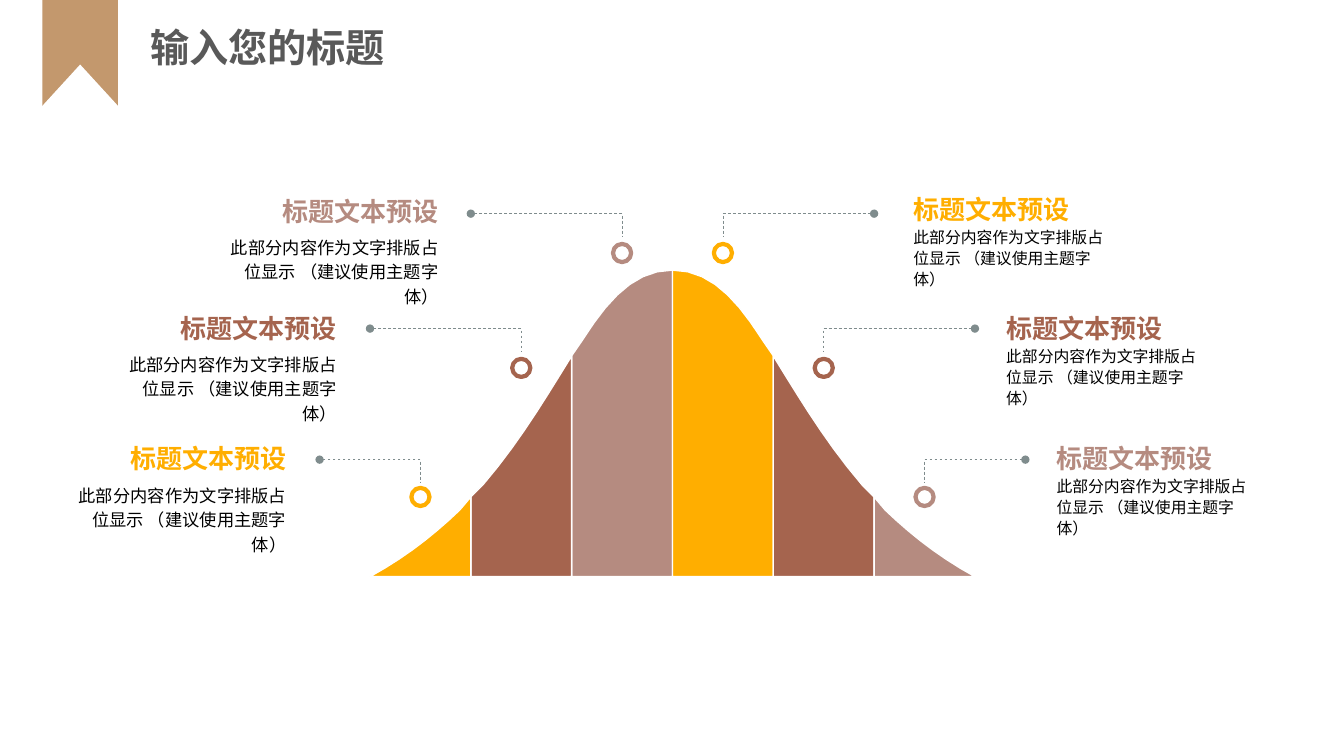
import dataclasses
import pptx
import pptx.dml.color
import pptx.enum.dml
import pptx.enum.shapes
import pptx.enum.text
import pptx.oxml
import pptx.util
from pptx.util import Inches

SHAPE = pptx.enum.shapes.MSO_SHAPE
ANCHOR = pptx.enum.text.MSO_ANCHOR
ALIGN = pptx.enum.text.PP_ALIGN
DRAWING = 'xmlns:a="http://schemas.openxmlformats.org/drawingml/2006/main"'


@dataclasses.dataclass
class Theme:
    ribbon: str = "C3986D"
    white: str = "FFFFFF"
    title: str = "595959"
    body: str = "000000"
    leader: str = "7F8C8D"
    rose: str = "B58B80"
    rust: str = "A5644E"
    amber: str = "FFAE00"
    title_font: str = "Noto Sans CJK SC"
    label_font: str = "Roboto Condensed"
    title_size: float = 28
    heading_size: float = 18.6
    left_body_size: float = 12.3
    right_body_size: float = 11.3


def rgb(color):
    return pptx.dml.color.RGBColor.from_string(color)


def bezier(start, control1, control2, end, steps=7):
    points = []
    for step in range(steps + 1):
        t = step / steps
        weights = ((1 - t) ** 3, 3 * t * (1 - t) ** 2, 3 * t * t * (1 - t), t ** 3)
        points.append(tuple(
            sum(w * p for w, p in zip(weights, axis))
            for axis in zip(start, control1, control2, end)))
    return points


class SlideBuilder:
    def __init__(self, slide, theme):
        self.slide = slide
        self.theme = theme

    def shape(self, kind, left, top, width, height, color):
        shape = self.slide.shapes.add_shape(
            kind, Inches(left), Inches(top), Inches(width), Inches(height))
        shape.shadow.inherit = False
        shape.fill.solid()
        shape.fill.fore_color.rgb = rgb(color)
        shape.line.fill.background()

    def ring(self, center, top, color, size=0.18):
        ring = self.slide.shapes.add_shape(
            SHAPE.OVAL, Inches(center - size / 2), Inches(top), Inches(size), Inches(size))
        ring.shadow.inherit = False
        ring.fill.background()
        ring.line.color.rgb = rgb(color)
        ring.line.width = pptx.util.Pt(3)

    def band(self, points, color):
        corners = [(Inches(x), Inches(y)) for x, y in points]
        outline = self.slide.shapes.build_freeform(*corners[0], scale=1.0)
        outline.add_line_segments(corners[1:], close=True)
        band = outline.convert_to_shape()
        band.shadow.inherit = False
        band.fill.solid()
        band.fill.fore_color.rgb = rgb(color)
        band.line.color.rgb = rgb(self.theme.white)
        band.line.width = pptx.util.Pt(1)

    def leader(self, start, end, dot=False):
        leader = self.slide.shapes.add_connector(
            pptx.enum.shapes.MSO_CONNECTOR.STRAIGHT,
            *(Inches(value) for value in start + end))
        leader.line.color.rgb = rgb(self.theme.leader)
        leader.line.width = pptx.util.Pt(0.5)
        leader.line.dash_style = pptx.enum.dml.MSO_LINE.DASH
        if dot:
            leader.line._get_or_add_ln().append(
                pptx.oxml.parse_xml(f'<a:tailEnd {DRAWING} type="oval"/>'))
        leader._element.spPr.append(pptx.oxml.parse_xml(f"<a:effectLst {DRAWING}/>"))

    def text(self, words, box, insets, font, size, color, bold=False,
             align=ALIGN.LEFT, anchor=ANCHOR.TOP, spacing=1.0):
        frame = self.slide.shapes.add_textbox(*(Inches(value) for value in box)).text_frame
        frame.word_wrap = True
        frame.vertical_anchor = anchor
        (frame.margin_left, frame.margin_top,
         frame.margin_right, frame.margin_bottom) = (Inches(value) for value in insets)
        paragraph = frame.paragraphs[0]
        paragraph.text = words
        paragraph.alignment = align
        paragraph.line_spacing = spacing
        paragraph.font.name = font
        paragraph.font.size = pptx.util.Pt(size)
        paragraph.font.bold = bold
        paragraph.font.color.rgb = rgb(color)

    def label(self, side, edge, heading_top, body_top, color):
        theme = self.theme
        on_left = side < 0
        align = ALIGN.RIGHT if on_left else ALIGN.LEFT
        heading_width, body_width = 1.95, 2.57
        self.text("此部分内容作为文字排版占位显示 （建议使用主题字体）",
                  (edge - body_width * on_left, body_top, body_width, 0.61),
                  (0.1 if on_left else 0.31, 0.05, 0.31, 0.05), theme.label_font,
                  theme.left_body_size if on_left else theme.right_body_size,
                  theme.body, align=align,
                  anchor=ANCHOR.TOP if on_left else ANCHOR.MIDDLE,
                  spacing=1.2 if on_left else 1.1)
        self.text("标题文本预设",
                  (edge - heading_width * on_left, heading_top, heading_width, 0.35),
                  (0, 0, 0.31, 0) if on_left else (0.31, 0, 0, 0), theme.label_font,
                  theme.heading_size, color, bold=True, align=align,
                  anchor=ANCHOR.BOTTOM if on_left else ANCHOR.MIDDLE)


def main():
    deck = pptx.Presentation()
    deck.slide_width, deck.slide_height = Inches(13.33), Inches(7.5)
    theme = Theme()
    builder = SlideBuilder(deck.slides.add_slide(deck.slide_layouts[6]), theme)

    builder.shape(SHAPE.RECTANGLE, 0.42, -0.01, 0.75, 1.06, theme.ribbon)
    builder.shape(SHAPE.ISOSCELES_TRIANGLE, 0.42, 0.64, 0.75, 0.41, theme.white)
    builder.text("输入您的标题", (1.39, 0.18, 3.11, 0.57), (0.1, 0.05, 0.1, 0.05),
                 theme.title_font, theme.title_size, theme.title, bold=True)

    peak, base = 6.67, 5.72
    slopes = [
        bezier((0, 2.68), (0.37, 2.68), (0.63, 2.96), (0.89, 3.37)) + [(1, 3.53)],
        [(1, 3.53)] + bezier((1.03, 3.58), (1.26, 3.95), (1.52, 4.39), (1.88, 4.81))
        + [(2, 4.93)],
        [(2, 4.93)] + bezier((2.11, 5.06), (2.36, 5.3), (2.65, 5.53), (3, 5.72)),
    ]
    leaders = [(2.12, 2.42, 1.5), (3.26, 3.56, 1.5), (4.56, 4.84, 1)]
    sides = {
        -1: [(theme.rose, 4.66, 1.9, 2.26), (theme.rust, 3.65, 3.06, 3.42),
             (theme.amber, 3.15, 4.35, 4.72)],
        1: [(theme.amber, 8.75, 1.9, 2.25), (theme.rust, 9.67, 3.08, 3.43),
            (theme.rose, 10.17, 4.37, 4.72)],
    }
    for side, labels in sides.items():
        tiers = zip(slopes, leaders, labels)
        for tier, (slope, (shelf, ring_top, reach), label) in enumerate(tiers):
            color, edge, heading_top, body_top = label
            outline = slope + [(tier + 1, base), (tier, base)]
            builder.band([(peak + side * x, y) for x, y in outline], color)
            column = peak + side * (tier + 0.5)
            builder.ring(column, ring_top, color)
            builder.leader((column, shelf + 0.02), (column, shelf + 0.22))
            builder.leader((column, shelf), (column + side * reach, shelf), dot=True)
            builder.label(side, edge, heading_top, body_top, color)

    deck.save("out.pptx")


if __name__ == "__main__":
    main()
